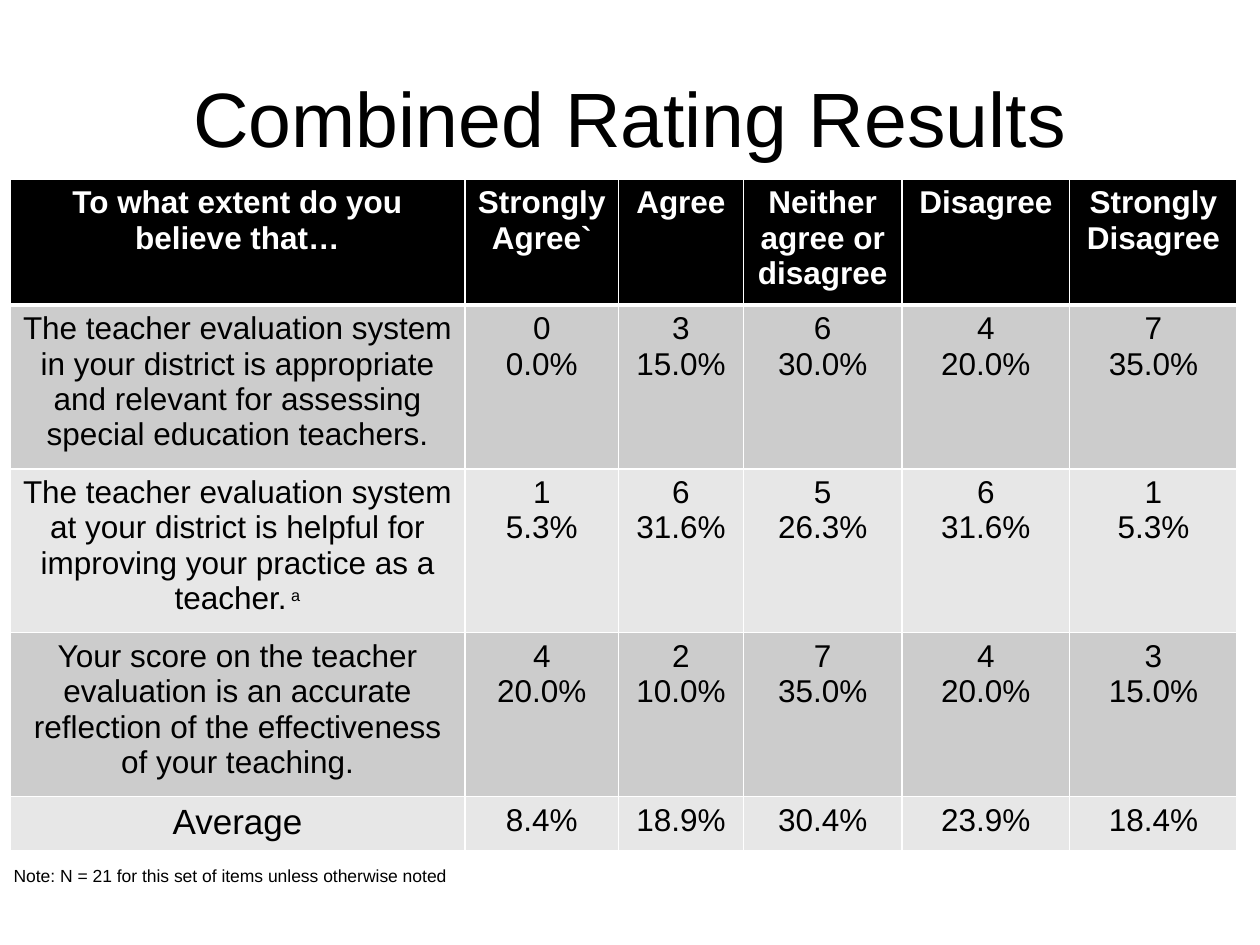
from lxml.etree import SubElement
from pptx import Presentation
from pptx.dml.color import RGBColor
from pptx.enum.text import MSO_ANCHOR as Anchor, PP_ALIGN as Align
from pptx.oxml import parse_xml
from pptx.oxml.ns import nsdecls, qn
from pptx.util import Inches, Pt

BLACK = RGBColor(0x00, 0x00, 0x00)
WHITE = RGBColor(0xFF, 0xFF, 0xFF)
DARK_BAND = RGBColor(0xCC, 0xCC, 0xCC)
LIGHT_BAND = RGBColor(0xE7, 0xE7, 0xE7)

COLUMN_WIDTHS = [3.61, 1.22, 0.99, 1.26, 1.33, 1.33]
ROW_HEIGHTS = [1, 1.3, 1.3, 1.3, 0.43]
RATINGS = [
    ["To what extent do you believe that…", "Strongly Agree`", "Agree",
     "Neither agree or disagree", "Disagree", "Strongly Disagree"],
    ["The teacher evaluation system in your district is appropriate and "
     "relevant for assessing special education teachers.",
     "0\n0.0%", "3\n15.0%", "6\n30.0%", "4\n20.0%", "7\n35.0%"],
    ["The teacher evaluation system at your district is helpful for "
     "improving your practice as a teacher.",
     "1\n5.3%", "6\n31.6%", "5\n26.3%", "6\n31.6%", "1\n5.3%"],
    ["Your score on the teacher evaluation is an accurate reflection of "
     "the effectiveness of your teaching.",
     "4\n20.0%", "2\n10.0%", "7\n35.0%", "4\n20.0%", "3\n15.0%"],
    ["Average", "8.4%", "18.9%", "30.4%", "23.9%", "18.4%"],
]
FOOTNOTE_ROW = 2
AVERAGE_ROW = 4


def add_span(para, text, size=18, color=BLACK, bold=False, baseline=0):
    """Add a run; baseline is the raise in percent of the text size."""
    span = para.add_run()
    span.text = text
    span.font.name = "Arial"
    span.font.size = Pt(size)
    span.font.bold = bold
    span.font.color.rgb = color
    if baseline:
        span.font._element.set("baseline", str(baseline * 1000))


def write_text(frame, text, align=Align.CENTER, **style):
    """Write one paragraph per line of text and return the last one."""
    for index, line in enumerate(text.split("\n")):
        para = frame.add_paragraph() if index else frame.paragraphs[0]
        para.alignment = align
        add_span(para, line, **style)
    return para


def add_text_box(page, text, left, top, width, height,
                 anchor=Anchor.TOP, **style):
    box = page.shapes.add_textbox(
        Inches(left), Inches(top), Inches(width), Inches(height))
    box.text_frame.word_wrap = True
    box.text_frame.vertical_anchor = anchor
    write_text(box.text_frame, text, **style)


def set_borders(cell, left=1, right=1, top=1, bottom=1):
    """Draw white cell borders, with widths in points."""
    properties = cell._tc.get_or_add_tcPr()
    sides = {"lnL": left, "lnR": right, "lnT": top, "lnB": bottom}
    for position, (tag, width) in enumerate(sides.items()):
        line = parse_xml(f'<a:{tag} {nsdecls("a")} w="{Pt(width)}"/>')
        fill = SubElement(line, qn("a:solidFill"))
        SubElement(fill, qn("a:srgbClr"), val=str(WHITE))
        properties.insert(position, line)


def fill_cell(cell, text, row, column):
    is_header = row == 0
    is_average_label = row == AVERAGE_ROW and column == 0
    cell.fill.solid()
    if is_header:
        cell.fill.fore_color.rgb = BLACK
    else:
        cell.fill.fore_color.rgb = DARK_BAND if row % 2 else LIGHT_BAND
    set_borders(cell, top=3 if row == 1 else 1, bottom=3 if is_header else 1)
    para = write_text(cell.text_frame, text,
                      size=20 if is_average_label else 18,
                      color=WHITE if is_header else BLACK, bold=is_header)
    if row == FOOTNOTE_ROW and column == 0:
        add_span(para, " a", size=16, baseline=30)


def add_ratings_table(page, left, top):
    table = page.shapes.add_table(
        len(ROW_HEIGHTS), len(COLUMN_WIDTHS), Inches(left), Inches(top),
        Inches(sum(COLUMN_WIDTHS)), Inches(sum(ROW_HEIGHTS))).table
    for column, width in zip(table.columns, COLUMN_WIDTHS):
        column.width = Inches(width)
    for row, height in zip(table.rows, ROW_HEIGHTS):
        row.height = Inches(height)
    for row, texts in enumerate(RATINGS):
        for column, text in enumerate(texts):
            fill_cell(table.cell(row, column), text, row, column)


def main():
    deck = Presentation()
    deck.slide_width = Inches(10)
    deck.slide_height = Inches(7.5)
    page = deck.slides.add_slide(deck.slide_layouts[6])
    add_text_box(page, "Combined Rating Results", 0.5, 0.3, 9, 1.25,
                 anchor=Anchor.MIDDLE, size=44)
    add_ratings_table(page, 0.08, 1.42)
    add_text_box(page, "Note: N = 21 for this set of items unless otherwise noted",
                 0.01, 6.82, 6.41, 0.27, align=Align.LEFT, size=10)
    deck.save("out.pptx")


if __name__ == "__main__":
    main()
